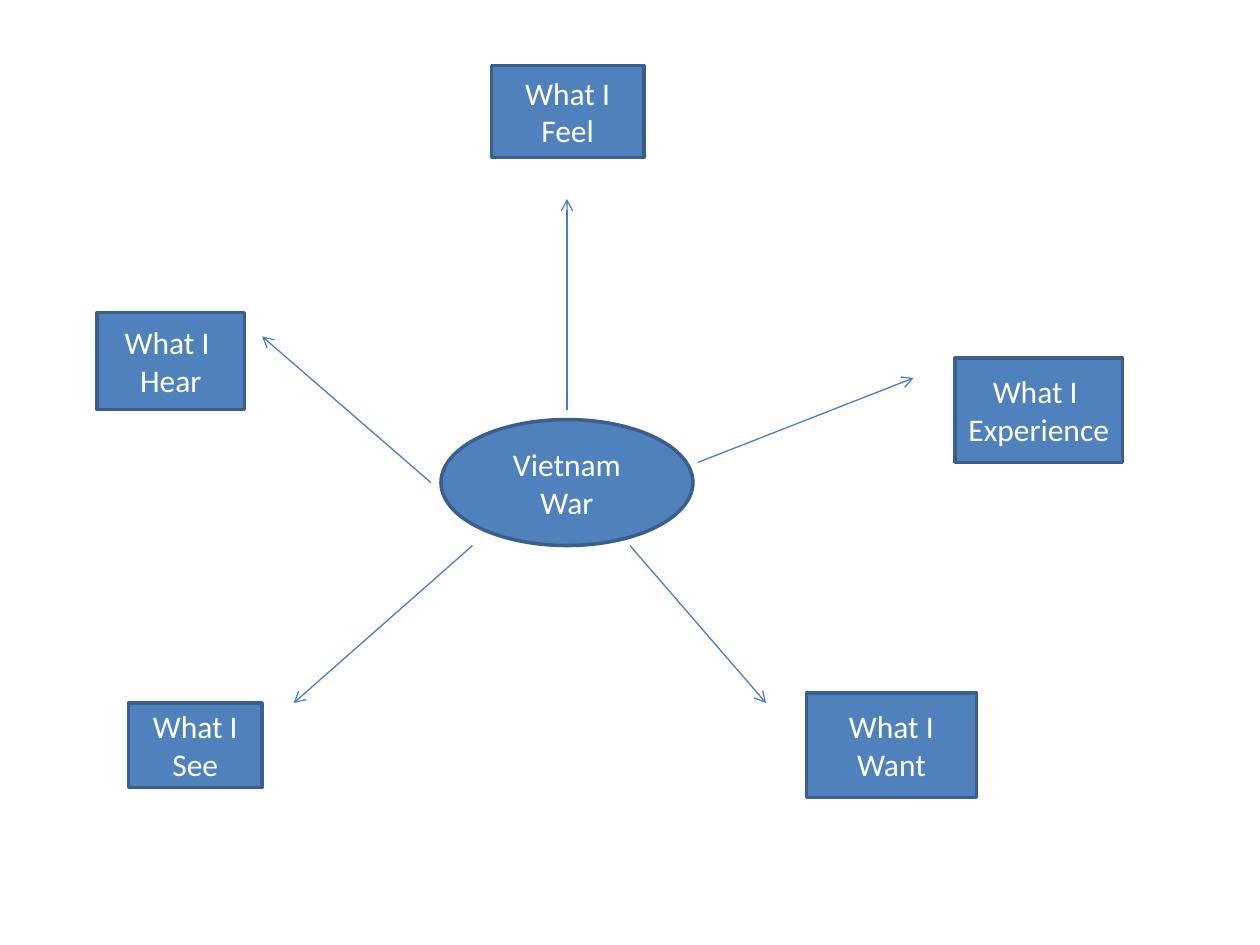
from dataclasses import dataclass

from lxml import etree
from pptx import Presentation
from pptx.dml.color import RGBColor
from pptx.enum.shapes import MSO_CONNECTOR, MSO_SHAPE
from pptx.enum.text import MSO_ANCHOR, PP_ALIGN
from pptx.oxml.ns import qn
from pptx.util import Inches, Pt

RECT, OVAL = MSO_SHAPE.RECTANGLE, MSO_SHAPE.OVAL
STRAIGHT = MSO_CONNECTOR.STRAIGHT
MIDDLE, CENTER = MSO_ANCHOR.MIDDLE, PP_ALIGN.CENTER


@dataclass(frozen=True)
class Theme:
    fill: RGBColor = RGBColor(0x4F, 0x81, 0xBD)
    border: RGBColor = RGBColor(0x3A, 0x5F, 0x8C)
    arrow: RGBColor = RGBColor(0x4B, 0x7E, 0xBC)
    text: RGBColor = RGBColor(0xFF, 0xFF, 0xFF)
    font: str = "Calibri"
    size: Pt = Pt(18)
    border_width: Pt = Pt(2)
    arrow_width: Pt = Pt(0.75)


theme = Theme()
text_format = {"name": theme.font, "size": theme.size}


def add_node(s, kind, box, lines):
    sp = s.shapes.add_shape(kind, *map(Inches, box))
    sp.shadow.inherit = False
    sp.fill.solid()
    sp.fill.fore_color.rgb = theme.fill
    sp.line.color.rgb = theme.border
    sp.line.width = theme.border_width
    tf = sp.text_frame
    tf.word_wrap = True
    tf.vertical_anchor = MIDDLE
    for i, line in enumerate(lines):
        p = tf.add_paragraph() if i else tf.paragraphs[0]
        p.alignment = CENTER
        r = p.add_run()
        r.text = line
        r.font.color.rgb = theme.text
        for name, value in text_format.items():
            setattr(r.font, name, value)


def add_arrow(s, start, end):
    cx = s.shapes.add_connector(STRAIGHT, *map(Inches, start + end))
    cx.line.color.rgb = theme.arrow
    cx.line.width = theme.arrow_width
    etree.SubElement(cx.line._get_or_add_ln(), qn("a:tailEnd"), type="arrow")
    etree.SubElement(cx._element.spPr, qn("a:effectLst"))


prs = Presentation()
prs.slide_width, prs.slide_height = Inches(10), Inches(7.5)
s = prs.slides.add_slide(prs.slide_layouts[6])

# Central topic
add_node(s, OVAL, (3.5, 3.33, 2, 1), ["Vietnam", "War"])

# Surrounding prompts: box, lines, arrow start, arrow end
prompts = [
    ((3.9, 0.52, 1.21, 0.73), ["What I", "Feel"], (4.5, 3.25), (4.5, 1.58)),
    ((0.77, 2.48, 1.17, 0.77), ["What I ", "Hear"], (3.42, 3.83), (2.08, 2.67)),
    ((1.02, 5.58, 1.06, 0.67), ["What I See"], (3.75, 4.33), (2.33, 5.58)),
    ((6.4, 5.5, 1.35, 0.83), ["What I Want"], (5, 4.33), (6.08, 5.58)),
    ((7.58, 2.84, 1.33, 0.83), ["What I ", "Experience"], (5.54, 3.67), (7.25, 3)),
]
for box, lines, start, end in prompts:
    add_arrow(s, start, end)
    add_node(s, RECT, box, lines)

prs.save("out.pptx")
